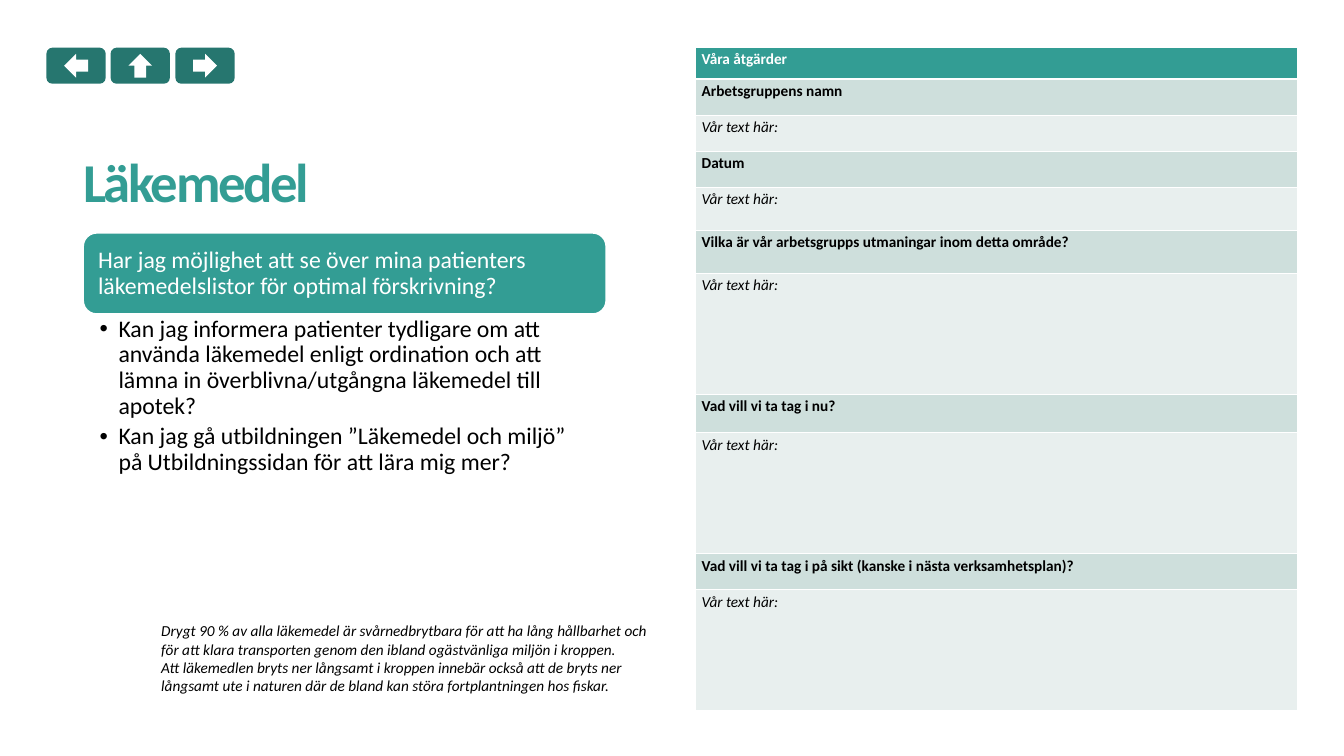
"""Build the Läkemedel slide with its question list and action table."""
from lxml import etree
from pptx import Presentation
from pptx import util as u
from pptx.dml.color import RGBColor
from pptx.enum import shapes, text
from pptx.oxml.ns import qn

PX = 9144
TEAL = RGBColor(0x33, 0x9D, 0x94)
DARK_TEAL = RGBColor(0x26, 0x76, 0x6F)
HEADING_ROW = RGBColor(0xCE, 0xDF, 0xDC)
ANSWER_ROW = RGBColor(0xE8, 0xEF, 0xEE)
WHITE = RGBColor(0xFF, 0xFF, 0xFF)
BLACK = RGBColor(0, 0, 0)


def set_text(tf, lines, color, insets, para, font):
    """Fill a text frame with formatted paragraphs."""
    tf.word_wrap = True
    tf.auto_size = text.MSO_AUTO_SIZE.NONE
    for side, inset in zip(("left", "top", "right", "bottom"), insets):
        setattr(tf, f"margin_{side}", inset * PX)
    tf.text = "\n".join(lines)
    for p in tf.paragraphs:
        values = {"alignment": text.PP_ALIGN.LEFT, "space_before": u.Pt(0)} | para
        for name, value in values.items():
            setattr(p, name, value)
        for r in p.runs:
            for name, value in ({"name": "Calibri"} | font).items():
                setattr(r.font, name, value)
            r.font.color.rgb = color


def add_filled(kind, box, color):
    """Add a preset shape with a plain fill."""
    sp = s.shapes.add_shape(kind, *(n * PX for n in box))
    sp.shadow.inherit = False
    sp.fill.solid()
    sp.fill.fore_color.rgb = color
    sp.line.fill.background()
    return sp


prs = Presentation()
prs.slide_width, prs.slide_height = 2199 * PX, 1237 * PX
s = prs.slides.add_slide(prs.slide_layouts[1])

title, body = s.shapes.title, s.placeholders[1]
for sp, box in ((title, (136, 134, 856, 223)), (body, (136, 514, 856, 280))):
    sp.left, sp.top, sp.width, sp.height = (n * PX for n in box)

set_text(title.text_frame, ["Läkemedel"], TEAL, (0, 0, 0, 8),
         {"line_spacing": 0.85}, {"size": u.Pt(64.5), "bold": True})
title.text_frame.vertical_anchor = text.MSO_ANCHOR.BOTTOM
title.text_frame.paragraphs[0].runs[0].font._element.set("spc", "-280")

card = add_filled(shapes.MSO_SHAPE.ROUNDED_RECTANGLE, (136, 381, 856, 133), TEAL)
card.line.color.rgb = WHITE
card.line.width = u.Pt(2)
set_text(card.text_frame,
         ["Har jag möjlighet att se över mina patienters läkemedelslistor för optimal förskrivning?"],
         WHITE, (18, 18, 18, 18), {"line_spacing": 0.9}, {"size": u.Pt(28)})
card.text_frame.vertical_anchor = text.MSO_ANCHOR.MIDDLE

set_text(body.text_frame, [
    "Kan jag informera patienter tydligare om att använda läkemedel enligt ordination och att lämna in överblivna/utgångna läkemedel till apotek?",
    "Kan jag gå utbildningen ”Läkemedel och miljö” på Utbildningssidan för att lära mig mer?",
], BLACK, (27, 4, 22, 4), {"line_spacing": 0.9, "space_after": u.Pt(6)}, {"size": u.Pt(28)})
body.text_frame.vertical_anchor = text.MSO_ANCHOR.TOP
for p in body.text_frame.paragraphs:
    pPr = p._p.get_or_add_pPr()
    pPr.set("marL", str(31 * PX))
    pPr.set("indent", str(-31 * PX))

note = s.shapes.add_textbox(254 * PX, 1012 * PX, 843 * PX, 131 * PX)
set_text(note.text_frame, [
    "Drygt 90 % av alla läkemedel är svårnedbrytbara för att ha lång hållbarhet och för att klara transporten genom den ibland ogästvänliga miljön i kroppen.",
    "Att läkemedlen bryts ner långsamt i kroppen innebär också att de bryts ner långsamt ute i naturen där de bland kan störa fortplantningen hos fiskar.",
], BLACK, (10, 5, 10, 5), {}, {"size": u.Pt(18), "italic": True})

for i, angle in enumerate((180, 270, 0)):
    left = 76 + i * 211 // 2
    add_filled(shapes.MSO_SHAPE.ROUNDED_RECTANGLE, (left, 78, 97, 59), DARK_TEAL)
    arrow = add_filled(shapes.MSO_SHAPE.RIGHT_ARROW, (left + 29, 88, 39, 39), WHITE)
    arrow.rotation = angle

ANSWER = "Vår text här:"
sections = [
    ("Arbetsgruppens namn", 59, 59),
    ("Datum", 59, 71),
    ("Vilka är vår arbetsgrupps utmaningar inom detta område?", 70, 198),
    ("Vad vill vi ta tag i nu?", 63, 198),
    ("Vad vill vi ta tag i på sikt (kanske i nästa verksamhetsplan)?", 59, 198),
]
rows = [("Våra åtgärder", 52, TEAL, WHITE)]
for heading, heading_height, answer_height in sections:
    rows += [(heading, heading_height, HEADING_ROW, BLACK),
             (ANSWER, answer_height, ANSWER_ROW, BLACK)]

height = sum(row[1] for row in rows)
table = s.shapes.add_table(len(rows), 1, 1138 * PX, 77 * PX, 985 * PX, height * PX).table
for i, (label, row_height, fill, color) in enumerate(rows):
    table.rows[i].height = row_height * PX
    cell = table.cell(i, 0)
    italic = label == ANSWER
    set_text(cell.text_frame, [label], color, (10, 5, 10, 5), {},
             {"size": u.Pt(18), "bold": not italic, "italic": italic})
    tcPr = cell._tc.get_or_add_tcPr()
    for side in "LRTB":
        thick = (i, side) in ((0, "B"), (1, "T"))
        ln = etree.SubElement(tcPr, qn(f"a:ln{side}"), w=str(u.Pt(3 if thick else 1)))
        solid = etree.SubElement(ln, qn("a:solidFill"))
        etree.SubElement(solid, qn("a:srgbClr"), val=str(WHITE))
    cell.fill.solid()
    cell.fill.fore_color.rgb = fill

prs.save("out.pptx")
